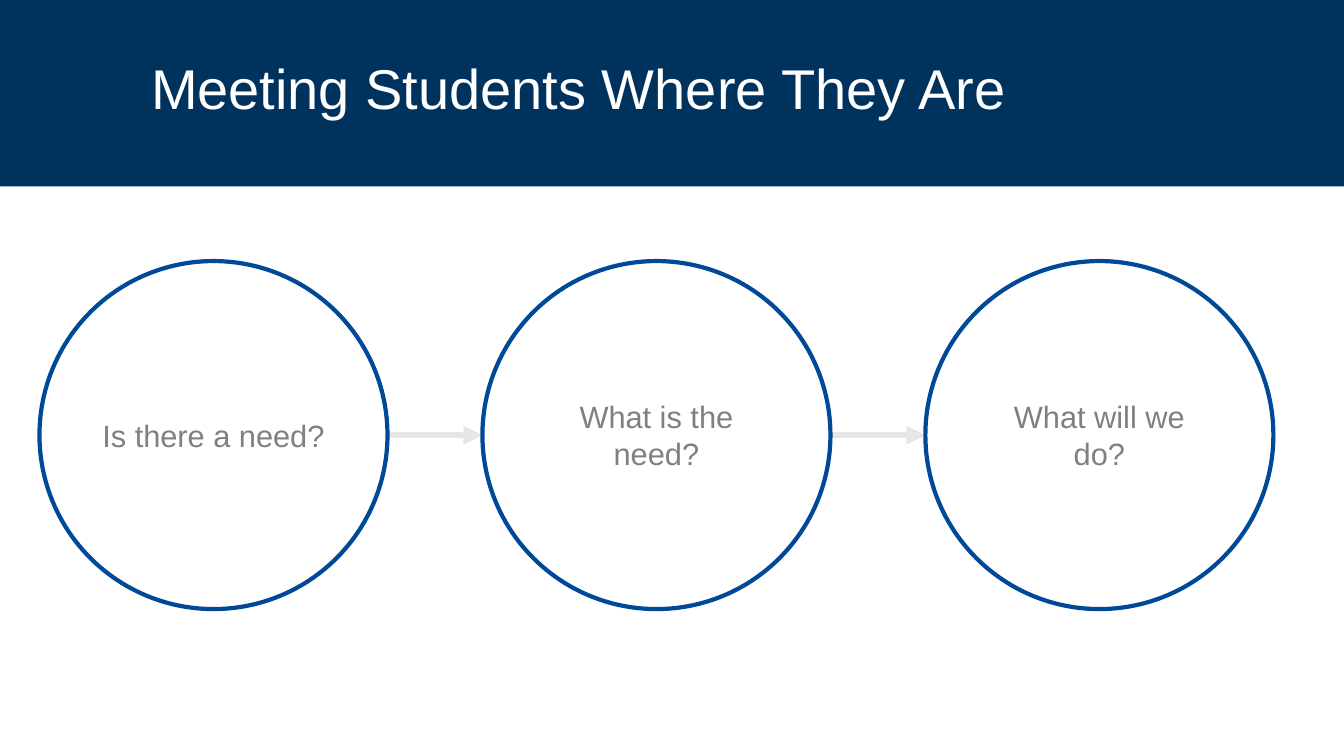
"""Build the slide on meeting students where they are."""
from dataclasses import dataclass

from lxml import etree
from pptx import Presentation
from pptx.dml.color import RGBColor
from pptx.enum.shapes import MSO_CONNECTOR, MSO_SHAPE
from pptx.enum.text import MSO_ANCHOR, PP_ALIGN
from pptx.oxml.ns import qn
from pptx.slide import Slide
from pptx.text.text import TextFrame
from pptx.util import Pt

STRAIGHT = MSO_CONNECTOR.STRAIGHT
OVAL, RECT = MSO_SHAPE.OVAL, MSO_SHAPE.RECTANGLE
TOP, MIDDLE = MSO_ANCHOR.TOP, MSO_ANCHOR.MIDDLE
LEFT, CENTER = PP_ALIGN.LEFT, PP_ALIGN.CENTER


@dataclass(frozen=True)
class Theme:
    font: str = "Arial"
    navy: RGBColor = RGBColor(0x00, 0x32, 0x5E)
    blue: RGBColor = RGBColor(0x00, 0x49, 0x98)
    white: RGBColor = RGBColor(0xFF, 0xFF, 0xFF)
    gray: RGBColor = RGBColor(0x80, 0x80, 0x80)
    pale: RGBColor = RGBColor(0xE7, 0xE6, 0xE6)
    title: float = 40
    body: float = 22


@dataclass(frozen=True)
class Step:
    text: str
    left: float


THEME = Theme()
WIDTH, HEIGHT = 960, 540
SIZE, PITCH = 248.6, 316.4
START, UPPER = 28.2, 186.5
ASKS = ("Is there a need?", "What is the need?", "What will we do?")
STEPS = [Step(text, START + i * PITCH) for i, text in enumerate(ASKS)]


def write(frame: TextFrame, text: str, size: float, color: RGBColor,
          align: PP_ALIGN, anchor: MSO_ANCHOR) -> None:
    frame.word_wrap = True
    frame.vertical_anchor = anchor
    para = frame.paragraphs[0]
    para.alignment = align
    run = para.add_run()
    run.text = text
    run.font.name = THEME.font
    run.font.size = Pt(size)
    run.font.color.rgb = color


def add_banner(slide: Slide, text: str) -> None:
    band = slide.shapes.add_shape(RECT, Pt(0), Pt(0), Pt(WIDTH), Pt(133.2))
    band.shadow.inherit = False
    band.fill.solid()
    band.fill.fore_color.rgb = THEME.navy
    band.line.fill.background()
    box = slide.shapes.add_textbox(Pt(100.8), Pt(40.3), Pt(798.5), Pt(77.8))
    write(box.text_frame, text, THEME.title, THEME.white, LEFT, TOP)
    box.text_frame.paragraphs[0].line_spacing = 0.9


def add_arrow(slide: Slide, step: Step, after: Step) -> None:
    level = Pt(UPPER + SIZE / 2)
    arrow = slide.shapes.add_connector(
        STRAIGHT, Pt(step.left + SIZE), level, Pt(after.left), level)
    arrow.line.color.rgb = THEME.pale
    arrow.line.width = Pt(4.5)
    props = arrow.element.spPr
    etree.SubElement(props.find(qn("a:ln")), qn("a:tailEnd"), type="triangle")
    etree.SubElement(props, qn("a:effectLst"))


def add_step(slide: Slide, step: Step) -> None:
    disc = slide.shapes.add_shape(
        OVAL, Pt(step.left), Pt(UPPER), Pt(SIZE), Pt(SIZE))
    disc.shadow.inherit = False
    disc.fill.solid()
    disc.fill.fore_color.rgb = THEME.white
    disc.line.color.rgb = THEME.blue
    disc.line.width = Pt(3)
    write(disc.text_frame, step.text, THEME.body, THEME.gray, CENTER, MIDDLE)


def main() -> None:
    deck = Presentation()
    deck.slide_width, deck.slide_height = Pt(WIDTH), Pt(HEIGHT)
    slide = deck.slides.add_slide(deck.slide_layouts[6])
    add_banner(slide, "Meeting Students Where They Are")
    for step, after in zip(STEPS, STEPS[1:]):
        add_arrow(slide, step, after)
    for step in STEPS:
        add_step(slide, step)
    deck.save("out.pptx")


if __name__ == "__main__":
    main()
